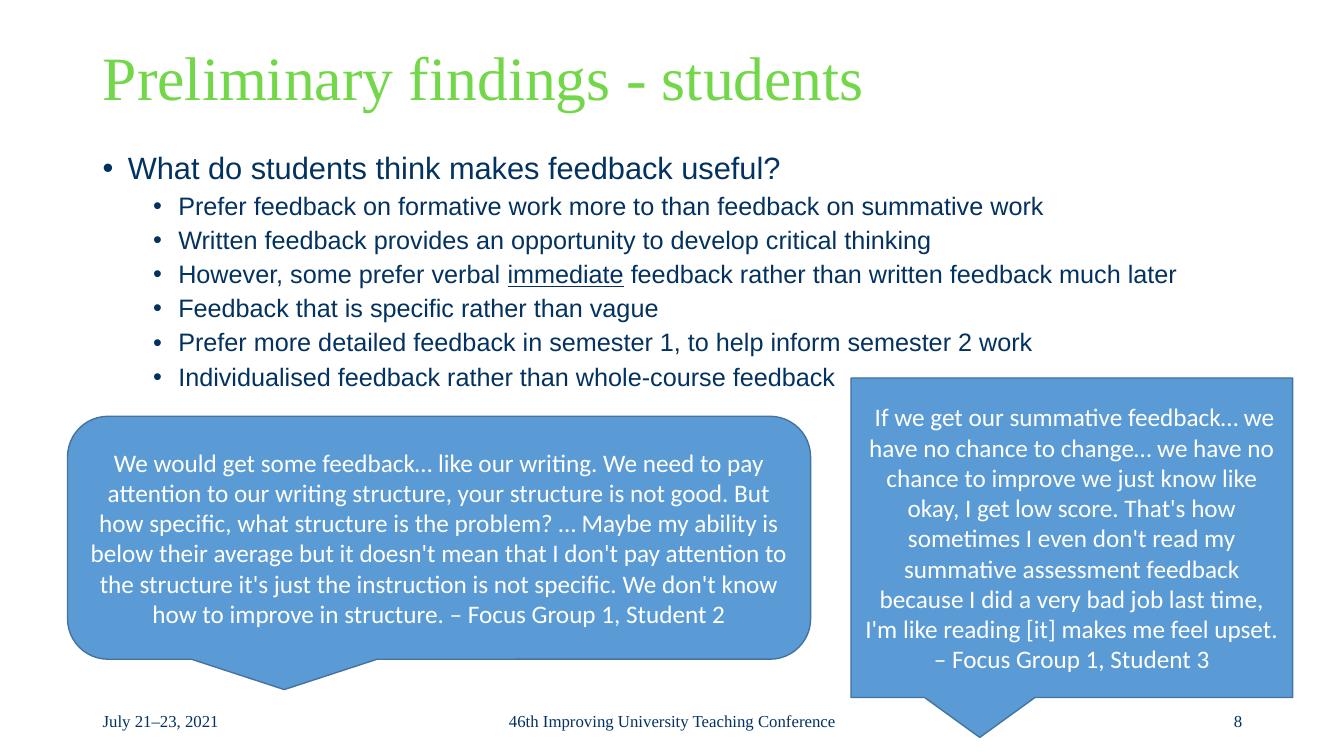
from lxml import etree
from pptx import Presentation
from pptx import util as u
from pptx.dml.color import RGBColor
from pptx.enum import shapes, text
from pptx.oxml import ns

Inches, Pt = u.Inches, u.Pt
ALIGN = text.PP_ALIGN
COLORS = {
    "title": "72D749",
    "navy": "033260",
    "callout": "5B9BD5",
    "callout_edge": "43739E",
    "white": "FFFFFF",
}
SERIF = "Times New Roman"

QUESTION = "What do students think makes feedback useful?"
# Each finding is a list of (wording, underlined) runs
FINDINGS = [
    [("Prefer feedback on formative work more to than feedback on summative work", False)],
    [("Written feedback provides an opportunity to develop critical thinking", False)],
    [("However, some prefer verbal ", False), ("immediate", True),
     (" feedback rather than written feedback much later", False)],
    [("Feedback that is specific rather than vague", False)],
    [("Prefer more detailed feedback in semester 1, to help inform semester 2 work", False)],
    [("Individualised feedback rather than whole-course feedback", False)],
]
SUMMATIVE_QUOTE = (
    " If we get our summative feedback… we have no chance to change… we have no "
    "chance to improve we just know like okay, I get low score. That's how sometimes "
    "I even don't read my summative assessment feedback because I did a very bad job "
    "last time, I'm like reading [it] makes me feel upset. – Focus Group 1, Student 3"
)
STRUCTURE_QUOTE = (
    "We would get some feedback… like our writing. We need to pay attention to our "
    "writing structure, your structure is not good. But how specific, what structure "
    "is the problem? … Maybe my ability is below their average but it doesn't mean "
    "that I don't pay attention to the structure it's just the instruction is not "
    "specific. We don't know how to improve in structure. – Focus Group 1, Student 2"
)


def color(key):
    return RGBColor.from_string(COLORS[key])


def add_run(paragraph, wording, size, font, color_key, underline=False):
    run = paragraph.add_run()
    run.text = wording
    run.font.size = Pt(size)
    run.font.name = font
    run.font.color.rgb = color(color_key)
    if underline:
        run.font.underline = True


def add_title(slide, wording):
    title = slide.shapes.title
    title.left, title.top = Inches(0.92), Inches(0.4)
    title.width, title.height = Inches(11.5), Inches(0.8)
    frame = title.text_frame
    frame.auto_size = text.MSO_AUTO_SIZE.NONE
    frame.vertical_anchor = text.MSO_ANCHOR.MIDDLE
    paragraph = frame.paragraphs[0]
    paragraph.alignment = ALIGN.LEFT
    paragraph.line_spacing = 0.9
    add_run(paragraph, wording, 44, SERIF, "title")


def add_text_frame(slide, left, top, width, height):
    box = slide.shapes.add_textbox(Inches(left), Inches(top), Inches(width), Inches(height))
    box.text_frame.word_wrap = True
    return box.text_frame


def format_bullet(paragraph, level, indent):
    paragraph.level = level
    paragraph.line_spacing = 0.9
    properties = paragraph._p.get_or_add_pPr()
    properties.set("marL", str(Inches(indent)))
    properties.set("indent", str(Inches(-0.25)))
    etree.SubElement(properties, ns.qn("a:buFont")).set("typeface", "Arial")
    etree.SubElement(properties, ns.qn("a:buChar")).set("char", "•")


def add_findings(slide):
    frame = add_text_frame(slide, 0.92, 1.47, 11.5, 5.33)
    question = frame.paragraphs[0]
    format_bullet(question, 0, 0.25)
    add_run(question, QUESTION, 22, "Arial", "navy")
    for finding in FINDINGS:
        paragraph = frame.add_paragraph()
        format_bullet(paragraph, 1, 0.75)
        paragraph.space_before = Pt(5)
        for wording, underline in finding:
            add_run(paragraph, wording, 18, "Arial", "navy", underline)


def add_footer(slide, left, width, wording, alignment):
    frame = add_text_frame(slide, left, 6.95, width, 0.4)
    frame.vertical_anchor = text.MSO_ANCHOR.MIDDLE
    paragraph = frame.paragraphs[0]
    paragraph.alignment = alignment
    add_run(paragraph, wording, 12, SERIF, "navy")


def add_quote(slide, preset, left, top, width, height, wording):
    callout = slide.shapes.add_shape(
        preset, Inches(left), Inches(top), Inches(width), Inches(height))
    callout.shadow.inherit = False
    callout.fill.solid()
    callout.fill.fore_color.rgb = color("callout")
    callout.line.color.rgb = color("callout_edge")
    callout.line.width = Pt(1)
    frame = callout.text_frame
    frame.word_wrap = True
    frame.vertical_anchor = text.MSO_ANCHOR.MIDDLE
    paragraph = frame.paragraphs[0]
    paragraph.alignment = ALIGN.CENTER
    add_run(paragraph, wording, 18, "Calibri", "white")


def main():
    deck = Presentation()
    deck.slide_width, deck.slide_height = Inches(13.33), Inches(7.5)
    slide = deck.slides.add_slide(deck.slide_layouts[5])

    # Heading and findings
    add_title(slide, "Preliminary findings - students")
    add_findings(slide)

    # Footer
    add_footer(slide, 9.42, 3, "8", ALIGN.RIGHT)
    add_footer(slide, 0.92, 3, "July 21–23, 2021", ALIGN.LEFT)
    add_footer(slide, 4.42, 4.5, "46th Improving University Teaching Conference", ALIGN.CENTER)

    # Student quotes
    preset = shapes.MSO_SHAPE
    add_quote(slide, preset.RECTANGULAR_CALLOUT, 8.44, 3.75, 4.38, 3.17, SUMMATIVE_QUOTE)
    add_quote(slide, preset.ROUNDED_RECTANGULAR_CALLOUT, 0.67, 4.13, 7.37, 2.41, STRUCTURE_QUOTE)

    deck.save("out.pptx")


if __name__ == "__main__":
    main()
